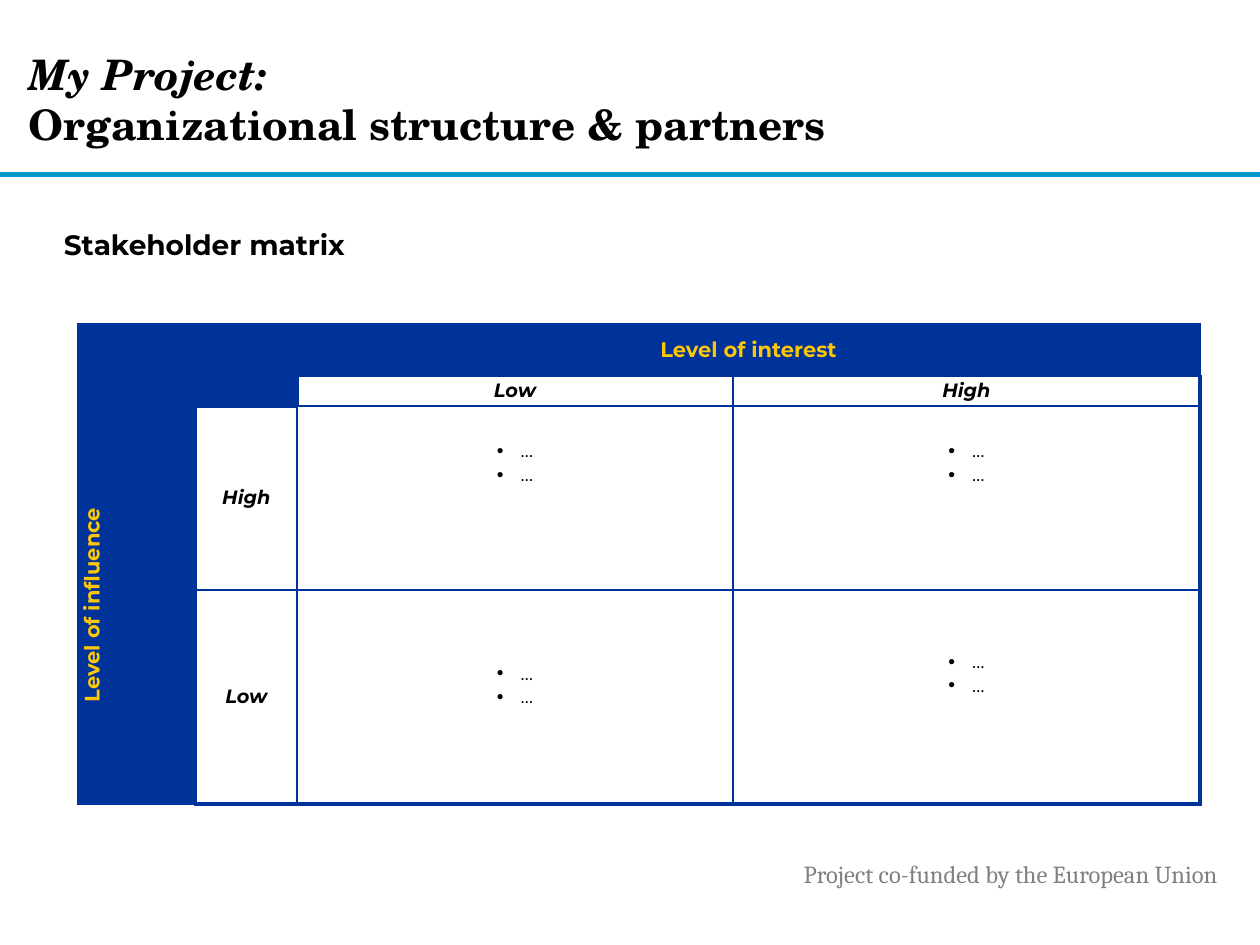
from dataclasses import dataclass

from lxml.etree import SubElement
from pptx import Presentation
from pptx.dml.color import RGBColor
from pptx.enum.shapes import MSO_SHAPE
from pptx.enum.text import MSO_ANCHOR, MSO_AUTO_SIZE, PP_ALIGN
from pptx.oxml import parse_xml
from pptx.oxml.ns import nsdecls, qn
from pptx.util import Pt


@dataclass(frozen=True)
class Theme:
    blue: str = "003399"
    yellow: str = "FDC608"
    black: str = "000000"
    grey: str = "808080"
    rule_fill: str = "0C94B7"
    rule_line: str = "0096D3"
    sans: str = "Montserrat"
    title_font: str = "TeX Gyre Schola"
    footer_font: str = "Cambria"
    title: int = 24
    heading: int = 16
    footer: int = 14
    axis: int = 12
    label: int = 11


T = Theme()


def write(p, text, font=T.sans, size=T.label, color=T.black,
          bold=False, italic=False, align=PP_ALIGN.LEFT):
    p.alignment = align
    r = p.add_run()
    r.text = text
    r.font.name = font
    r.font.size = Pt(size)
    r.font.bold = bold
    r.font.italic = italic
    r.font.color.rgb = RGBColor.from_string(color)


prs = Presentation()
prs.slide_width, prs.slide_height = Pt(720), Pt(540)
s = prs.slides.add_slide(prs.slide_layouts[5])

# Rule below the title
rule = s.shapes.add_shape(MSO_SHAPE.RECTANGLE, 0, Pt(98.64), Pt(720), Pt(2.16))
rule.shadow.inherit = False
rule.fill.solid()
rule.fill.fore_color.rgb = RGBColor.from_string(T.rule_fill)
rule.line.color.rgb = RGBColor.from_string(T.rule_line)
rule.line.width = Pt(1)

# Title
title = s.shapes.title
title.left, title.top, title.width, title.height = Pt(16.5), Pt(13.7), Pt(523.5), Pt(85.7)
tf = title.text_frame
tf.margin_left = tf.margin_right = tf.margin_top = tf.margin_bottom = 0
tf.vertical_anchor = MSO_ANCHOR.MIDDLE
tf.auto_size = MSO_AUTO_SIZE.NONE
tf.word_wrap = True
p = tf.paragraphs[0]
write(p, "My Project:", font=T.title_font, size=T.title, bold=True, italic=True)
p.add_line_break()
write(p, "Organizational structure & partners", font=T.title_font, size=T.title, bold=True)

# Heading and footer
heading = s.shapes.add_textbox(Pt(36.5), Pt(126.7), Pt(611.5), Pt(40))
tf = heading.text_frame
tf.word_wrap = True
tf.margin_left = tf.margin_right = 0
p = tf.paragraphs[0]
p.space_after = Pt(6)
write(p, "Stakeholder matrix", size=T.heading, bold=True)

footer = s.shapes.add_textbox(Pt(452.2), Pt(487.4), Pt(263.5), Pt(24.5))
footer.text_frame.word_wrap = True
write(footer.text_frame.paragraphs[0], "Project co-funded by the European Union",
      font=T.footer_font, size=T.footer, color=T.grey)

# Matrix: grid, fills and borders
col_widths = [66.5, 58, 249, 267]
row_heights = [29, 17.3, 105, 122.4]
last_row, last_col = len(row_heights) - 1, len(col_widths) - 1
frame = s.shapes.add_table(len(row_heights), len(col_widths), Pt(45.3), Pt(185.7),
                           Pt(sum(col_widths)), Pt(sum(row_heights)))
table = frame.table
table.first_row = table.horz_banding = False
for column, width in zip(table.columns, col_widths):
    column.width = Pt(width)
for row, height in zip(table.rows, row_heights):
    row.height = Pt(height)

for r, row in enumerate(table.rows):
    for c, cell in enumerate(row.cells):
        cell.vertical_anchor = MSO_ANCHOR.MIDDLE
        cell.margin_left = cell.margin_right = Pt(4.3)
        cell.margin_top = cell.margin_bottom = 0
        if r == 0 or c == 0 or (r, c) == (1, 1):
            cell.fill.solid()
            cell.fill.fore_color.rgb = RGBColor.from_string(T.blue)
        else:
            cell.fill.background()
        # Thick on the outside and around the empty corner
        thick = {
            "L": c == 0 or (r, c) == (1, 2),
            "R": c == last_col or (r, c) == (1, 1),
            "T": r == 0 or (r, c) == (2, 1),
            "B": r == last_row,
        }
        for i, (side, is_thick) in enumerate(thick.items()):
            width = Pt(3 if is_thick else 1.5)
            cell._tc.get_or_add_tcPr().insert(i, parse_xml(
                f'<a:ln{side} {nsdecls("a")} w="{width}"><a:solidFill>'
                f'<a:srgbClr val="{T.blue}"/></a:solidFill></a:ln{side}>'))

for start, end in [((0, 0), (0, 1)), ((0, 2), (0, 3)), ((1, 0), (1, 1)), ((2, 0), (3, 0))]:
    table.cell(*start).merge(table.cell(*end))

# Axis names and level labels
for r, c, text in [(0, 2, "Level of interest"), (2, 0, "Level of influence")]:
    write(table.cell(r, c).text_frame.paragraphs[0], text, size=T.axis,
          color=T.yellow, bold=True, align=PP_ALIGN.CENTER)
table.cell(2, 0)._tc.get_or_add_tcPr().set("vert", "vert270")

for r, c, text in [(1, 2, "Low"), (1, 3, "High"), (2, 1, "High"), (3, 1, "Low")]:
    write(table.cell(r, c).text_frame.paragraphs[0], text,
          bold=True, italic=True, align=PP_ALIGN.CENTER)

# Bulleted quadrants, raised by a bottom margin
for r, c, bottom in [(2, 2, 40.2), (2, 3, 40.2), (3, 2, 13.4), (3, 3, 26.8)]:
    cell = table.cell(r, c)
    cell.margin_bottom = Pt(bottom)
    tf = cell.text_frame
    for p in (tf.paragraphs[0], tf.add_paragraph()):
        pPr = p._p.get_or_add_pPr()
        pPr.set("marL", str(Pt(13.5)))
        pPr.set("indent", str(-Pt(13.5)))
        SubElement(pPr, qn("a:buFont")).set("typeface", "Arial")
        SubElement(pPr, qn("a:buChar")).set("char", "•")
        write(p, "…", align=PP_ALIGN.CENTER)

# Keep empty cells from stretching their rows
for cell in table.iter_cells():
    if not cell.text_frame.text:
        p = cell.text_frame.paragraphs[0]
        SubElement(p._p, qn("a:endParaRPr")).set("sz", str(T.label * 100))

prs.save("out.pptx")
